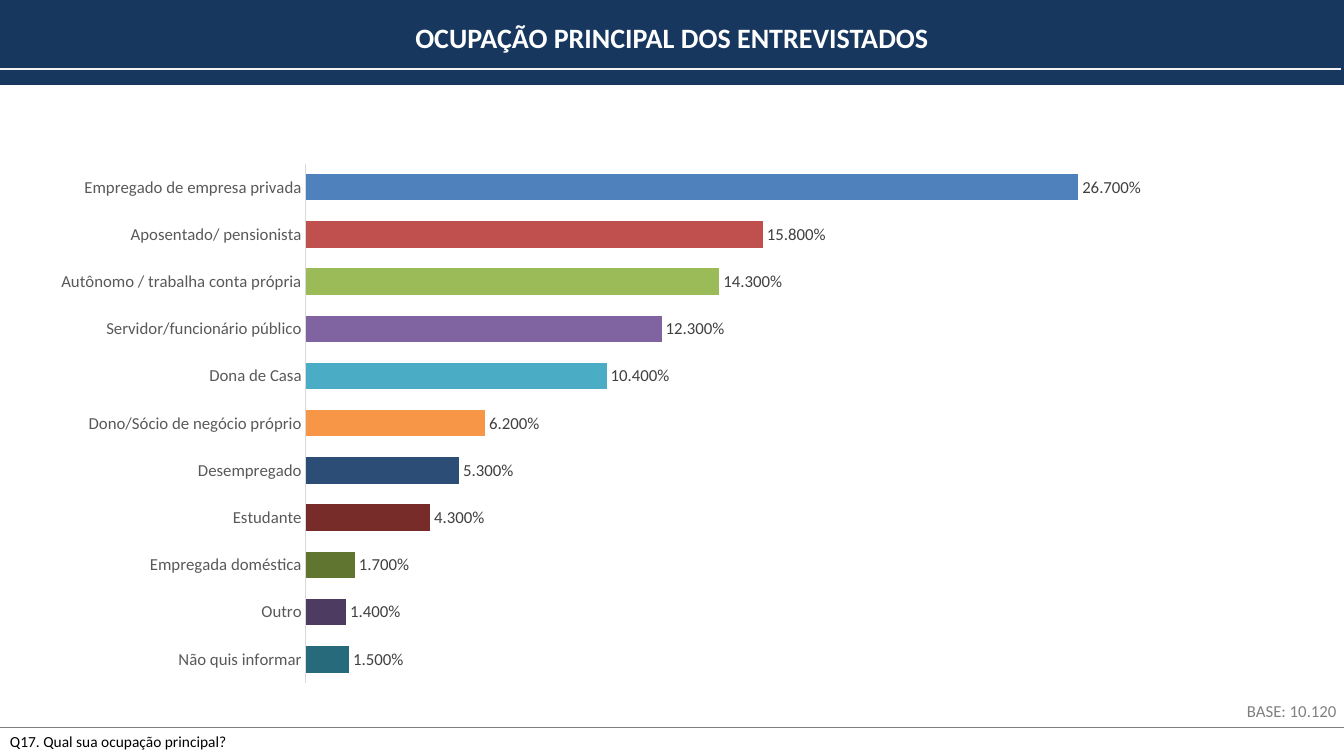
"""Builds the slide on the main occupation of the people interviewed."""
from dataclasses import dataclass

from lxml import etree
from pptx import Presentation
from pptx import util as u
from pptx.chart.data import CategoryChartData
from pptx.dml.color import RGBColor
from pptx.enum import chart as charts, shapes, text
from pptx.oxml.ns import qn


@dataclass(frozen=True)
class Theme:
    """Holds the font, type sizes and colours."""
    font: str = "Calibri"
    title: int = 20
    label: int = 12
    note: int = 11
    navy: str = "17375E"
    white: str = "FFFFFF"
    black: str = "000000"
    pale: str = "F2F2F2"
    rule: str = "7F7F7F"
    base: str = "808080"
    axis: str = "D9D9D9"
    category: str = "595959"
    value: str = "404040"
    bars: tuple = ("4F81BD", "C0504D", "9BBB59", "8064A2", "4BACC6", "F79646",
                   "2C4D75", "772C2A", "5F7530", "4D3B62", "276A7C")


OCCUPATIONS = {
    "Empregado de empresa privada": 0.267,
    "Aposentado/ pensionista": 0.158,
    "Autônomo / trabalha conta própria": 0.143,
    "Servidor/funcionário público": 0.123,
    "Dona de Casa": 0.104,
    "Dono/Sócio de negócio próprio": 0.062,
    "Desempregado": 0.053,
    "Estudante": 0.043,
    "Empregada doméstica": 0.017,
    "Outro": 0.014,
    "Não quis informar": 0.015,
}
COLUMNS, ROWS = 160, 90
FOOT = 86.6
PERCENT = "#.#00%"


class SlideBuilder:
    """Draws styled elements on a page divided into columns and rows."""

    def __init__(self, deck, theme):
        """Adds a blank page to the deck."""
        self.theme = theme
        self.column = deck.slide_width / COLUMNS
        self.row = deck.slide_height / ROWS
        self.page = deck.slides.add_slide(deck.slide_layouts[6])

    def place(self, left, top, width, height):
        """Turns columns and rows into lengths."""
        return (u.Emu(round(left * self.column)), u.Emu(round(top * self.row)),
                u.Emu(round(width * self.column)), u.Emu(round(height * self.row)))

    def style(self, font, size, color, bold=False):
        """Sets the typeface, size, colour and weight of a font."""
        font.name, font.size, font.bold = self.theme.font, u.Pt(size), bold
        font.color.rgb = RGBColor.from_string(color)

    def band(self, area, color):
        """Adds a plain filled rectangle."""
        box = self.page.shapes.add_shape(shapes.MSO_SHAPE.RECTANGLE, *self.place(*area))
        box.shadow.inherit = False
        box.fill.solid()
        box.fill.fore_color.rgb = RGBColor.from_string(color)
        box.line.fill.background()

    def rule(self, row, color, weight, shift=0):
        """Adds a horizontal line as wide as the page."""
        left, top, width, _ = self.place(shift, row, COLUMNS, 0)
        line = self.page.shapes.add_connector(
            shapes.MSO_CONNECTOR.STRAIGHT, left, top, left + width, top)
        line.line.color.rgb = RGBColor.from_string(color)
        line.line.width = u.Pt(weight)
        etree.SubElement(line._element.spPr, qn("a:effectLst"))

    def label(self, area, words, size, color, align=text.PP_ALIGN.LEFT, bold=False):
        """Adds a one-paragraph text box."""
        frame = self.page.shapes.add_textbox(*self.place(*area)).text_frame
        frame.word_wrap = True
        frame.auto_size = text.MSO_AUTO_SIZE.SHAPE_TO_FIT_TEXT
        para = frame.paragraphs[0]
        para.text, para.alignment = words, align
        self.style(para.font, size, color, bold)

    def bar_chart(self, area, values, plot_area):
        """Adds a horizontal bar chart with one colour per bar."""
        theme = self.theme
        data = CategoryChartData(number_format=PERCENT)
        data.categories = list(values)
        data.add_series("Entrevistados", list(values.values()))
        chart = self.page.shapes.add_chart(
            charts.XL_CHART_TYPE.BAR_CLUSTERED, *self.place(*area), data).chart
        chart.has_legend = chart.has_title = False
        self.style(chart.font, 10, theme.black)

        category_axis = chart.category_axis
        category_axis.reverse_order = True
        category_axis.has_major_gridlines = False
        category_axis.major_tick_mark = charts.XL_TICK_MARK.NONE
        category_axis.format.line.color.rgb = RGBColor.from_string(theme.axis)
        category_axis.format.line.width = u.Pt(0.75)
        self.style(category_axis.tick_labels.font, theme.label, theme.category)

        value_axis = chart.value_axis
        value_axis.minimum_scale, value_axis.maximum_scale = 0, 0.3
        value_axis.has_major_gridlines = False
        value_axis.visible = False

        plot = chart.plots[0]
        plot.gap_width, plot.vary_by_categories = 78, False
        for index, color in enumerate(theme.bars):
            fill = plot.series[0].points[index].format.fill
            fill.solid()
            fill.fore_color.rgb = RGBColor.from_string(color)

        plot.has_data_labels = True
        labels = plot.data_labels
        labels.show_value = True
        labels.number_format, labels.number_format_is_linked = PERCENT, False
        labels.position = charts.XL_LABEL_POSITION.OUTSIDE_END
        self.style(labels.font, theme.label, theme.value)
        self.fix_plot(chart, plot_area)

    def fix_plot(self, chart, plot_area):
        """Sets the inner plot area as shares of the chart."""
        area = chart._chartSpace.chart.plotArea
        for old in area.findall(qn("c:layout")):
            area.remove(old)
        layout = etree.Element(qn("c:layout"))
        area.insert(0, layout)
        manual = etree.SubElement(layout, qn("c:manualLayout"))
        settings = [("layoutTarget", "inner"), ("xMode", "edge"), ("yMode", "edge")]
        for tag, value in settings + list(zip("xywh", plot_area)):
            etree.SubElement(manual, qn(f"c:{tag}")).set("val", str(value))


def main():
    """Builds and saves the deck."""
    deck = Presentation()
    deck.slide_width, deck.slide_height = u.Inches(13.33), u.Inches(7.5)
    theme = Theme()
    slide = SlideBuilder(deck, theme)
    slide.rule(FOOT, theme.rule, 0.75)
    slide.band((0, 0, COLUMNS, 10.1), theme.navy)
    slide.label((0, 1.9, COLUMNS, 5.3), "OCUPAÇÃO PRINCIPAL DOS ENTREVISTADOS",
                theme.title, theme.white, text.PP_ALIGN.CENTER, True)
    slide.rule(8.2, theme.pale, 1, shift=-0.3)
    slide.label((0, FOOT, COLUMNS / 2, 3.4), "Q17. Qual sua ocupação principal?",
                theme.note, theme.black)
    slide.label((133, 82.8, 27.3, 3.6), "BASE: 10.120",
                theme.label, theme.base, text.PP_ALIGN.RIGHT)
    slide.bar_chart((4.7, 18.2, 137.8, 64.4), OCCUPATIONS, (0.23, 0.02, 0.75, 0.96))
    deck.save("out.pptx")


if __name__ == "__main__":
    main()
